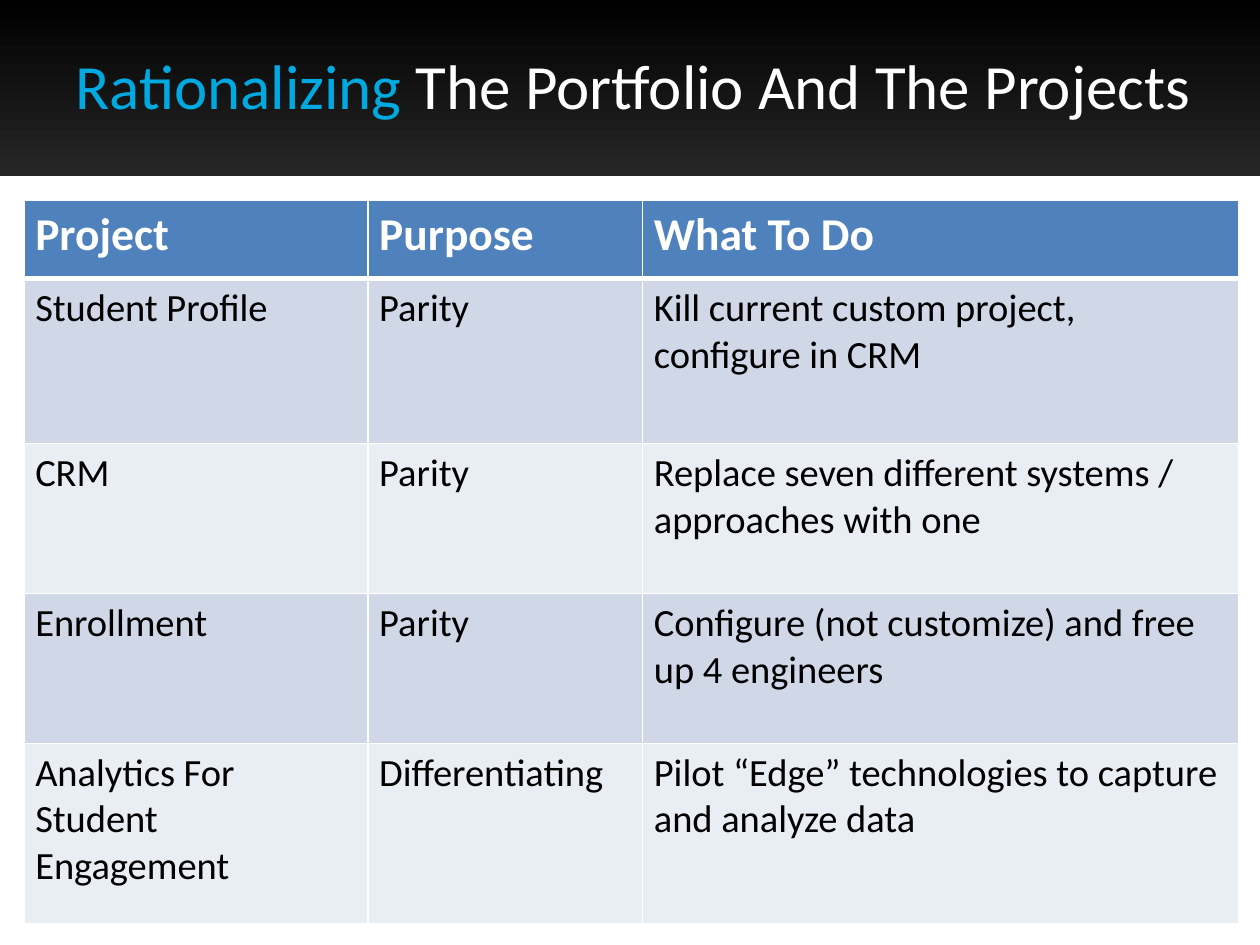
import pptx
import pptx.dml.color
import pptx.enum.shapes
import pptx.enum.text
import pptx.oxml.ns
import pptx.util
from lxml import etree
from pptx.util import Inches

FONT = "Calibri"
COLUMN_WIDTHS = [2.73, 2.18, 4.73]
ROW_HEIGHTS = [0.62, 1.31, 1.19, 1.19, 1.43]
PROJECT_ROWS = [
    ["Project", "Purpose", "What To Do"],
    ["Student Profile", "Parity", "Kill current custom project, configure in CRM"],
    ["CRM", "Parity", "Replace seven different systems / approaches with one"],
    ["Enrollment", "Parity", "Configure (not customize) and free up 4 engineers"],
    ["Analytics For Student Engagement", "Differentiating",
     "Pilot “Edge” technologies to capture and analyze data"],
]


def color(hex_string):
    return pptx.dml.color.RGBColor.from_string(hex_string)


def add_run(paragraph, text, size, hex_string, bold=False):
    run = paragraph.add_run()
    run.text = text
    run.font.name = FONT
    run.font.size = pptx.util.Pt(size)
    run.font.bold = bold
    run.font.color.rgb = color(hex_string)


def add_header_band(slide):
    band = slide.shapes.add_shape(
        pptx.enum.shapes.MSO_SHAPE.RECTANGLE, 0, 0, Inches(10), Inches(1.4))
    band.shadow.inherit = False
    band.line.fill.background()
    band.fill.gradient()
    band.fill.gradient_angle = 270
    for stop, hex_string, position in zip(
            band.fill.gradient_stops, ["000000", "262626"], [0, 1]):
        stop.color.rgb = color(hex_string)
        stop.position = position


def add_title(slide):
    title = slide.shapes.add_textbox(
        Inches(0.5), Inches(0.3), Inches(9.5), Inches(1.25))
    frame = title.text_frame
    frame.word_wrap = True
    frame.vertical_anchor = pptx.enum.text.MSO_ANCHOR.TOP
    frame.margin_top = Inches(0.07)
    paragraph = frame.paragraphs[0]
    add_run(paragraph, "Rationalizing", 36, "00A9E0")
    add_run(paragraph, " The Portfolio And The Projects", 36, "FFFFFF")


def add_border(cell, side, points):
    properties = cell._tc.get_or_add_tcPr()
    line = etree.SubElement(properties, pptx.oxml.ns.qn("a:ln" + side),
                            w=str(pptx.util.Pt(points)))
    fill = etree.SubElement(line, pptx.oxml.ns.qn("a:solidFill"))
    etree.SubElement(fill, pptx.oxml.ns.qn("a:srgbClr"), val="FFFFFF")


def fill_cell(cell, text, row_index):
    is_header = row_index == 0
    top = 3 if row_index == 1 else 1
    bottom = 3 if is_header else 1
    for side, points in zip("LRTB", [1, 1, top, bottom]):
        add_border(cell, side, points)
    band_color = "D0D8E8" if row_index % 2 else "E9EDF4"
    cell.fill.solid()
    cell.fill.fore_color.rgb = color("4F81BD" if is_header else band_color)
    cell.margin_left = cell.margin_right = Inches(0.09)
    cell.margin_top = cell.margin_bottom = Inches(0.05)
    add_run(cell.text_frame.paragraphs[0], text, 26 if is_header else 22,
            "FFFFFF" if is_header else "000000", is_header)


def add_project_table(slide):
    table = slide.shapes.add_table(
        len(ROW_HEIGHTS), len(COLUMN_WIDTHS), Inches(0.19), Inches(1.59),
        Inches(sum(COLUMN_WIDTHS)), Inches(sum(ROW_HEIGHTS))).table
    for column, width in zip(table.columns, COLUMN_WIDTHS):
        column.width = Inches(width)
    for row_index, (row, height) in enumerate(zip(table.rows, ROW_HEIGHTS)):
        row.height = Inches(height)
        for cell, text in zip(row.cells, PROJECT_ROWS[row_index]):
            fill_cell(cell, text, row_index)


def main():
    presentation = pptx.Presentation()
    presentation.slide_width = Inches(10)
    presentation.slide_height = Inches(7.5)
    slide = presentation.slides.add_slide(presentation.slide_layouts[6])
    add_header_band(slide)
    add_project_table(slide)
    add_title(slide)
    presentation.save("out.pptx")


if __name__ == "__main__":
    main()
